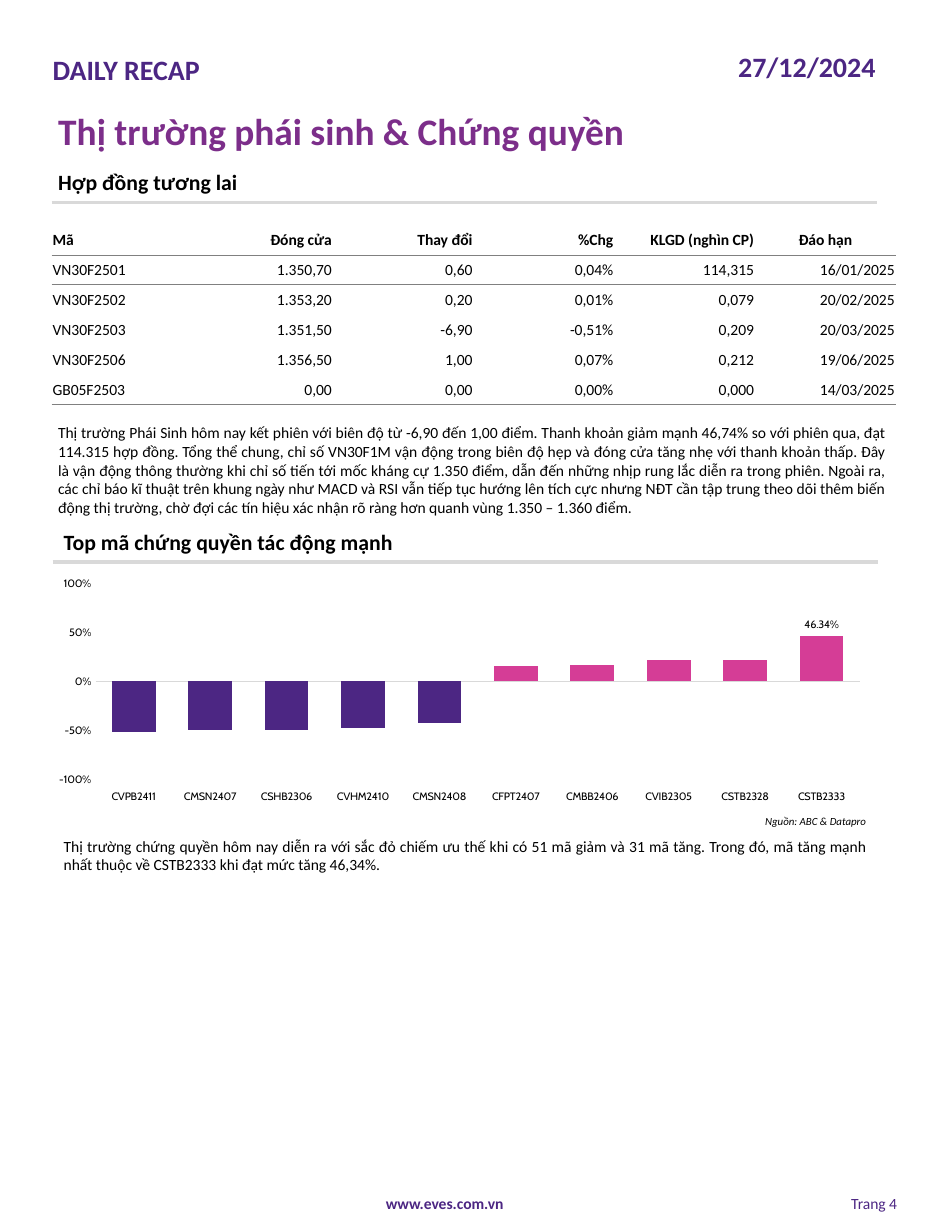
from dataclasses import dataclass

from lxml import etree
from pptx import Presentation
from pptx.chart.data import CategoryChartData
from pptx.dml.color import RGBColor
from pptx.enum import chart as ch, shapes, text
from pptx.oxml import ns
from pptx.util import Inches, Pt

PURPLE = RGBColor(0x4C, 0x26, 0x83)
PLUM = RGBColor(0x7C, 0x2E, 0x8A)
PINK = RGBColor(0xD5, 0x3D, 0x96)
BLACK = RGBColor(0, 0, 0)
WHITE = RGBColor(0xFF, 0xFF, 0xFF)
GRAY = RGBColor(0x80, 0x80, 0x80)
RULE = RGBColor(0xD9, 0xD9, 0xD9)
LEFT, CENTER, RIGHT, JUSTIFY = (text.PP_ALIGN.LEFT, text.PP_ALIGN.CENTER,
                                text.PP_ALIGN.RIGHT, text.PP_ALIGN.JUSTIFY)


@dataclass
class Style:
    size: float
    color: RGBColor = BLACK
    bold: bool = False
    italic: bool = False
    align: text.PP_ALIGN = LEFT


@dataclass
class Box:
    left: float
    top: float
    width: float
    height: float

    def lengths(self) -> list:
        return [Inches(v) for v in (self.left, self.top, self.width, self.height)]


@dataclass
class Section:
    heading: str
    box: Box
    rule_left: float
    rule_top: float


BANNER = Style(18, PURPLE, bold=True)
HEADING = Style(14, bold=True)
BODY = Style(10, align=JUSTIFY)
RULE_WIDTH = 7.37

SECTIONS = [
    Section("Hợp đồng tương lai", Box(0.42, 1.46, 3.29, 0.34), 0.46, 1.81),
    Section("Top mã chứng quyền tác động mạnh", Box(0.47, 4.67, 5.6, 0.34), 0.47, 5.02),
]
FUTURES = [
    ("Mã", "Đóng cửa", "Thay đổi", "%Chg", "KLGD (nghìn CP)", "Đáo hạn"),
    ("VN30F2501", "1.350,70", "0,60", "0,04%", "114,315", "16/01/2025"),
    ("VN30F2502", "1.353,20", "0,20", "0,01%", "0,079", "20/02/2025"),
    ("VN30F2503", "1.351,50", "-6,90", "-0,51%", "0,209", "20/03/2025"),
    ("VN30F2506", "1.356,50", "1,00", "0,07%", "0,212", "19/06/2025"),
    ("GB05F2503", "0,00", "0,00", "0,00%", "0,000", "14/03/2025"),
]
WARRANTS = {
    "CVPB2411": -0.52, "CMSN2407": -0.5, "CSHB2306": -0.5, "CVHM2410": -0.48,
    "CMSN2408": -0.43, "CFPT2407": 0.15, "CMBB2406": 0.16, "CVIB2305": 0.21,
    "CSTB2328": 0.21, "CSTB2333": 0.4634,
}
FUTURES_NOTE = (
    "Thị trường Phái Sinh hôm nay kết phiên với biên độ từ -6,90 đến 1,00 điểm. "
    "Thanh khoản giảm mạnh 46,74% so với phiên qua, đạt 114.315 hợp đồng. "
    "Tổng thể chung, chỉ số VN30F1M vận động trong biên độ hẹp và đóng cửa tăng nhẹ "
    "với thanh khoản thấp. Đây là vận động thông thường khi chỉ số tiến tới mốc kháng cự "
    "1.350 điểm, dẫn đến những nhịp rung lắc diễn ra trong phiên. Ngoài ra, các chỉ báo "
    "kĩ thuật trên khung ngày như MACD và RSI vẫn tiếp tục hướng lên tích cực nhưng NĐT "
    "cần tập trung theo dõi thêm biến động thị trường, chờ đợi các tín hiệu xác nhận "
    "rõ ràng hơn quanh vùng 1.350 – 1.360 điểm.")
WARRANTS_NOTE = (
    "Thị trường chứng quyền hôm nay diễn ra với sắc đỏ chiếm ưu thế khi có 51 mã giảm "
    "và 31 mã tăng. Trong đó, mã tăng mạnh nhất thuộc về CSTB2333 khi đạt mức tăng 46,34%.")


def write(frame, words: str, style: Style) -> None:
    frame.text = words
    frame.word_wrap = True
    paragraph = frame.paragraphs[0]
    paragraph.alignment = style.align
    font = paragraph.runs[0].font
    font.name, font.size = "Calibri", Pt(style.size)
    font.bold, font.italic = style.bold, style.italic
    font.color.rgb = style.color


def set_insets(frame, inset: float) -> None:
    frame.margin_left = frame.margin_right = Inches(inset)
    frame.margin_top = frame.margin_bottom = Inches(inset)


def add_text(parent, words: str, box: Box, style: Style, flush: bool = False) -> None:
    frame = parent.shapes.add_textbox(*box.lengths()).text_frame
    if flush:
        set_insets(frame, 0)
    write(frame, words, style)


def add_banner(slide, words: str, box: Box) -> None:
    banner = slide.shapes.add_shape(shapes.MSO_SHAPE.RECTANGLE, *box.lengths())
    banner.shadow.inherit = False
    banner.fill.background()
    banner.line.color.rgb, banner.line.width = WHITE, Pt(0.75)
    set_insets(banner.text_frame, 0)
    banner.text_frame.vertical_anchor = text.MSO_ANCHOR.TOP
    write(banner.text_frame, words, BANNER)


def add_section(slide, section: Section) -> None:
    group = slide.shapes.add_group_shape()
    top = Inches(section.rule_top)
    rule = group.shapes.add_connector(
        shapes.MSO_CONNECTOR.STRAIGHT, Inches(section.rule_left), top,
        Inches(section.rule_left + RULE_WIDTH), top)
    rule.line.color.rgb, rule.line.width = RULE, Pt(2.25)
    etree.SubElement(rule._element.spPr, ns.qn("a:effectLst"))
    add_text(group, section.heading, section.box, HEADING)


def add_border(cell, side: str) -> None:
    line = ns.nsdecls("a")
    border = etree.fromstring(
        f'<a:{side} {line} w="6350"><a:solidFill><a:srgbClr val="{GRAY}"/>'
        f'</a:solidFill></a:{side}>')
    # Borders come before the fill
    cell._tc.get_or_add_tcPr().insert(0, border)


def add_futures(slide, box: Box) -> None:
    rows, cols = len(FUTURES), len(FUTURES[0])
    table = slide.shapes.add_table(rows, cols, *box.lengths()).table
    table.first_row = table.horz_banding = False
    # The "No Style, No Grid" table style
    table._tbl.tblPr.find(ns.qn("a:tableStyleId")).text = "{2D5ABB26-0587-4C30-8999-92F81FD0307C}"
    for r, values in enumerate(FUTURES):
        for c, value in enumerate(values):
            cell = table.cell(r, c)
            align = LEFT if c == 0 else CENTER if (r, c) == (0, cols - 1) else RIGHT
            set_insets(cell, 0.01)
            cell.margin_bottom = 0
            cell.vertical_anchor = text.MSO_ANCHOR.MIDDLE
            write(cell.text_frame, value, Style(10, bold=r == 0, align=align))
            cell.fill.background()
            if r in (0, rows - 1):
                add_border(cell, "lnB")
            if r == 1:
                add_border(cell, "lnT")


def add_warrants(slide, box: Box) -> None:
    data = CategoryChartData(number_format="0.00%")
    data.categories = list(WARRANTS)
    data.add_series("Series 1", list(WARRANTS.values()))
    chart = slide.shapes.add_chart(
        ch.XL_CHART_TYPE.COLUMN_CLUSTERED, *box.lengths(), data).chart
    chart.has_legend = chart.has_title = False
    chart.font.name, chart.font.size, chart.font.color.rgb = "Cabin", Pt(7), BLACK

    # Axes
    names, scale = chart.category_axis, chart.value_axis
    for axis in (names, scale):
        axis.major_tick_mark = axis.minor_tick_mark = ch.XL_TICK_MARK.NONE
        axis.has_major_gridlines = False
    names.tick_label_position = ch.XL_TICK_LABEL_POSITION.LOW
    names.format.line.color.rgb, names.format.line.width = RULE, Pt(0.75)
    scale.minimum_scale, scale.maximum_scale, scale.major_unit = -1, 1, 0.5
    scale.tick_labels.number_format = "0%"
    scale.tick_labels.number_format_is_linked = False
    scale.format.line.fill.background()

    # Bars: losses purple, gains pink, only the best gain labelled
    plot = chart.plots[0]
    plot.gap_width, plot.overlap, plot.vary_by_categories = 75, -25, False
    bars = plot.series[0]
    bars.invert_if_negative = False
    bars.format.fill.solid()
    bars.format.fill.fore_color.rgb = PURPLE
    for i, change in enumerate(WARRANTS.values()):
        if change > 0:
            fill = bars.points[i].format.fill
            fill.solid()
            fill.fore_color.rgb = PINK
    bars.data_labels.show_value = False
    best = bars.points[len(WARRANTS) - 1].data_label
    best.font.size = Pt(7)
    best.position = ch.XL_LABEL_POSITION.OUTSIDE_END

    # Inner plot area
    area = chart._chartSpace.chart.plotArea
    for old in area.findall(ns.qn("c:layout")):
        area.remove(old)
    layout = etree.Element(ns.qn("c:layout"))
    manual = etree.SubElement(layout, ns.qn("c:manualLayout"))
    for tag, value in (("layoutTarget", "inner"), ("xMode", "edge"), ("yMode", "edge"),
                       ("x", "0.052"), ("y", "0.047"), ("w", "0.926"), ("h", "0.857")):
        etree.SubElement(manual, ns.qn(f"c:{tag}")).set("val", value)
    area.insert(0, layout)


def main() -> None:
    deck = Presentation()
    deck.slide_width, deck.slide_height = Inches(8.5), Inches(11)
    slide = deck.slides.add_slide(deck.slide_layouts[5])

    # Header and title
    add_banner(slide, "27/12/2024", Box(6.59, 0.44, 1.41, 0.31))
    add_banner(slide, "DAILY RECAP", Box(0.47, 0.47, 3.73, 0.3))
    title = slide.shapes.title
    title.left, title.top, title.width, title.height = Box(0.42, 0.92, 7.58, 0.5).lengths()
    title.text_frame.vertical_anchor = text.MSO_ANCHOR.TOP
    write(title.text_frame, "Thị trường phái sinh & Chứng quyền", Style(24, PLUM, bold=True))

    # Futures and warrants
    for section in SECTIONS:
        add_section(slide, section)
    add_futures(slide, Box(0.46, 2.01, 7.54, 1.6))
    add_text(slide, FUTURES_NOTE, Box(0.42, 3.73, 7.58, 0.94), BODY)
    add_warrants(slide, Box(0.47, 5.11, 7.37, 2.06))
    add_text(slide, "Nguồn: ABC & Datapro", Box(5.43, 7.22, 2.4, 0.22),
             Style(7, italic=True, align=RIGHT))
    add_text(slide, WARRANTS_NOTE, Box(0.47, 7.42, 7.36, 0.44), BODY)

    # Footer
    add_text(slide, "www.eves.com.vn", Box(2.61, 10.66, 2.72, 0.17),
             Style(10, PURPLE, bold=True, align=CENTER), flush=True)
    add_text(slide, "Trang 4", Box(6.05, 10.66, 1.96, 0.17),
             Style(10, PURPLE, align=RIGHT), flush=True)
    deck.save("out.pptx")


if __name__ == "__main__":
    main()
